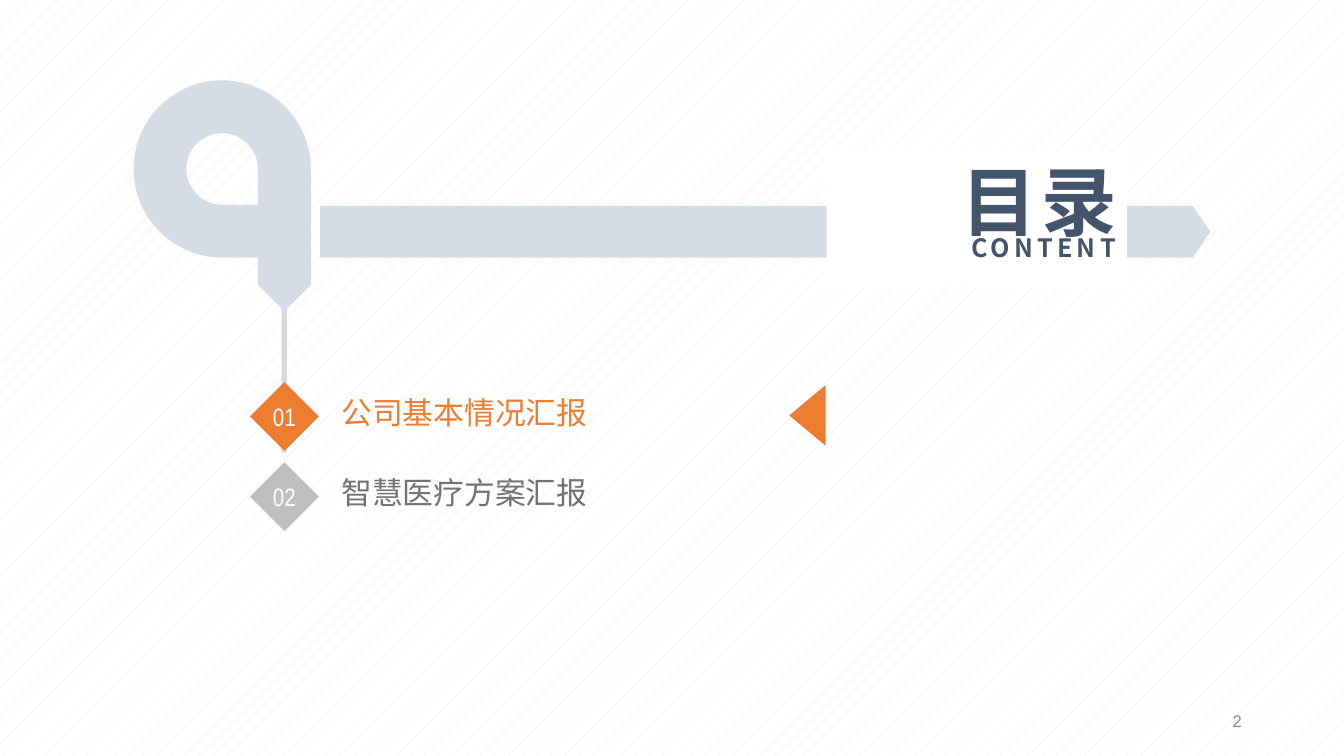
import lxml.etree
import pptx
import pptx.dml.color
import pptx.enum.dml
import pptx.enum.shapes
import pptx.enum.text
import pptx.oxml.ns
import pptx.util

Pt = pptx.util.Pt
RGB = pptx.dml.color.RGBColor
SHAPE = pptx.enum.shapes.MSO_SHAPE
ALIGN = pptx.enum.text.PP_ALIGN
ANCHOR = pptx.enum.text.MSO_ANCHOR
qn = pptx.oxml.ns.qn

WHITE = RGB(0xFF, 0xFF, 0xFF)
STRIPE = RGB(0xE7, 0xE6, 0xE6)
PALE_BLUE = RGB(0xD6, 0xDC, 0xE5)
NAVY = RGB(0x44, 0x54, 0x6A)
ORANGE = RGB(0xED, 0x7D, 0x31)
LINE_GRAY = RGB(0xD9, 0xD9, 0xD9)
MARKER_GRAY = RGB(0xBF, 0xBF, 0xBF)
TEXT_GRAY = RGB(0x76, 0x71, 0x71)
PAGE_GRAY = RGB(0x8C, 0x8C, 0x8C)

CJK = "Noto Sans CJK SC"
DEFAULT_INSETS = (7.2, 3.6, 7.2, 3.6)
QUARTER_ARC = 0.55  # handle length of a quarter circle, per radius
ITEM_TOP, ITEM_PITCH = 272.9, 57.3
ITEMS = [
    ("01", "公司基本情况汇报", ORANGE, ORANGE),
    ("02", "智慧医疗方案汇报", MARKER_GRAY, TEXT_GRAY),
]


def write(shape, text, *, size, color, font=CJK, bold=False, spacing=0,
          align=ALIGN.LEFT, anchor=ANCHOR.TOP, insets=DEFAULT_INSETS, wrap=False):
    frame = shape.text_frame
    frame.auto_size = pptx.enum.text.MSO_AUTO_SIZE.NONE
    frame.word_wrap = wrap
    frame.vertical_anchor = anchor
    (frame.margin_left, frame.margin_top,
     frame.margin_right, frame.margin_bottom) = map(Pt, insets)
    paragraph = frame.paragraphs[0]
    paragraph.alignment = align
    run = paragraph.add_run()
    run.text = text
    run.font.size = Pt(size)
    run.font.bold = bold
    run.font.color.rgb = color
    run.font.name = font
    # East Asian typeface and letter spacing
    properties = run._r.get_or_add_rPr()
    lxml.etree.SubElement(properties, qn("a:ea"), typeface=font)
    if spacing:
        properties.set("spc", str(spacing * 100))


def paint(shape, color):
    shape.shadow.inherit = False
    shape.fill.solid()
    shape.fill.fore_color.rgb = color
    shape.line.fill.background()


def add_block(slide, kind, box, color, rotation=0, adjustment=None):
    block = slide.shapes.add_shape(kind, *map(Pt, box))
    paint(block, color)
    block.rotation = rotation
    if adjustment is not None:
        block.adjustments[0] = adjustment
    return block


def add_label(slide, box, text, **text_format):
    label = slide.shapes.add_textbox(*map(Pt, box))
    write(label, text, **text_format)


def teardrop(center_x, center_y, radius):
    """Corner points of a circle with a square lower right corner."""
    steps = [(0, 1), (1, 1), (1, 0), (0, -1), (-1, 0), (0, 1)]
    return [(Pt(center_x + radius * x), Pt(center_y + radius * y)) for x, y in steps]


def round_diagonals(shape, center):
    """Turn every diagonal segment into a quarter circle around the center."""
    start = None
    for point in list(shape.element.iter(qn("a:pt"))):
        end = (int(point.get("x")), int(point.get("y")))
        segment = point.getparent()
        if segment.tag == qn("a:lnTo") and start[0] != end[0] and start[1] != end[1]:
            segment.tag = qn("a:cubicBezTo")
            for near, far in ((start, end), (end, start)):
                x, y = (round(n + QUARTER_ARC * (f - center))
                        for n, f in zip(near, far))
                handle = lxml.etree.Element(qn("a:pt"), x=str(x), y=str(y))
                point.addprevious(handle)
        start = end


def add_loop(slide, center_x, center_y, outer_radius, hole_radius):
    outline = teardrop(center_x, center_y, outer_radius)
    hole = teardrop(center_x, center_y, hole_radius)[::-1]
    builder = slide.shapes.build_freeform(*outline[0], scale=1.0)
    builder.add_line_segments(outline[1:], close=True)
    builder.move_to(*hole[0])
    builder.add_line_segments(hole[1:], close=True)
    loop = builder.convert_to_shape()
    round_diagonals(loop, Pt(outer_radius))
    paint(loop, PALE_BLUE)


def add_heading(slide):
    heading = slide.shapes.title
    # Bring the heading in front of the ribbon
    slide.shapes.element.append(heading.element)
    heading.left, heading.top, heading.width, heading.height = map(
        Pt, (590.4, 107.3, 214.6, 97.2))
    heading.fill.solid()
    heading.fill.fore_color.rgb = WHITE
    write(heading, "目录", size=54, color=NAVY, bold=True, spacing=3,
          align=ALIGN.RIGHT, wrap=True)


def add_item(slide, top, number, topic, marker_color, topic_color):
    marker = add_block(slide, SHAPE.DIAMOND, (178.6, top, 49.2, 49.2), marker_color)
    write(marker, number, size=18, color=WHITE, font="Arial Narrow",
          align=ALIGN.CENTER, anchor=ANCHOR.MIDDLE, insets=(0, 0, 0, 0))
    add_label(slide, (215.5, top + 15.5, 311.8, 19.4), topic, size=22,
              color=topic_color, anchor=ANCHOR.BOTTOM, insets=(28.5, 0, 0, 0))


def main():
    presentation = pptx.Presentation()
    presentation.slide_width, presentation.slide_height = Pt(960), Pt(540)
    slide = presentation.slides.add_slide(presentation.slide_layouts[5])

    # Background pattern
    backdrop = slide.background.fill
    backdrop.patterned()
    backdrop.pattern = pptx.enum.dml.MSO_PATTERN.PERCENT_5
    backdrop.fore_color.rgb = STRIPE
    backdrop.back_color.rgb = WHITE

    # Ribbon with its loop and stem
    add_block(slide, SHAPE.RECTANGLE, (201.2, 219.6, 3.8, 103.7), LINE_GRAY)
    add_block(slide, SHAPE.PENTAGON, (228.7, 147, 635.8, 37), PALE_BLUE,
              adjustment=0.34)
    add_loop(slide, 158.7, 120.7, 63.3, 25.6)
    add_block(slide, SHAPE.PENTAGON, (173.7, 174.1, 59, 37.6), PALE_BLUE, rotation=90)

    # Heading
    add_heading(slide)

    # Agenda items, last one at the back
    for index, item in reversed(list(enumerate(ITEMS))):
        add_item(slide, ITEM_TOP + index * ITEM_PITCH, *item)

    # Subheading and pointer to the current item
    add_label(slide, (680.4, 162.7, 123.8, 28.8), "CONTENT", size=18, color=NAVY,
              bold=True, spacing=3, align=ALIGN.RIGHT)
    add_block(slide, SHAPE.FLOWCHART_MERGE, (555.1, 283.8, 43.2, 25.9), ORANGE,
              rotation=90)

    # Page number
    add_label(slide, (678.2, 500.4, 216, 28.8), "2", size=12, color=PAGE_GRAY,
              font="Arial", align=ALIGN.RIGHT, anchor=ANCHOR.MIDDLE, wrap=True)

    presentation.save("out.pptx")


if __name__ == "__main__":
    main()
